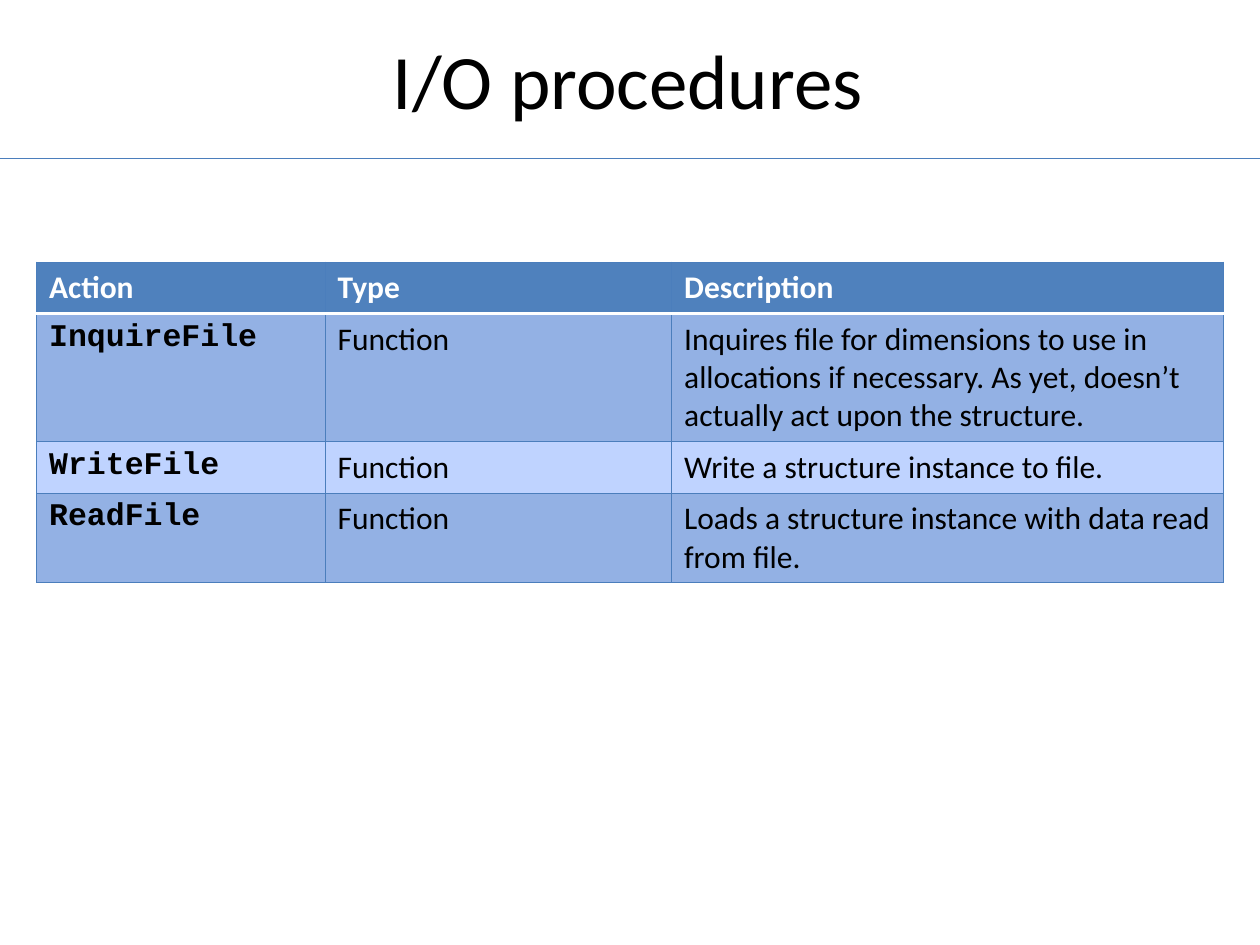
from lxml.etree import SubElement
from pptx import Presentation
from pptx.dml.color import RGBColor
from pptx.enum.shapes import MSO_CONNECTOR
from pptx.enum.text import MSO_ANCHOR, PP_ALIGN
from pptx.oxml.ns import qn
from pptx.util import Inches, Pt

COLORS = {
    "black": "000000",
    "white": "FFFFFF",
    "border": "4B7EBC",
    "header": "4F81BD",
    "dark_band": "93B1E4",
    "light_band": "BFD3FF",
}
COLUMN_WIDTHS = [2.29, 2.75, 4.38]
ROW_HEIGHT = 0.41
ROWS = [
    ("Action", "Type", "Description"),
    ("InquireFile", "Function",
     "Inquires file for dimensions to use in allocations if necessary. "
     "As yet, doesn’t actually act upon the structure."),
    ("WriteFile", "Function", "Write a structure instance to file."),
    ("ReadFile", "Function", "Loads a structure instance with data read from file."),
]


def color(name):
    return RGBColor.from_string(COLORS[name])


def add_run(paragraph, text, size, color_name, font_name="Calibri", bold=False):
    run = paragraph.add_run()
    run.text = text
    run.font.name = font_name
    run.font.size = Pt(size)
    run.font.bold = bold
    run.font.color.rgb = color(color_name)


def set_title(slide, text):
    title = slide.shapes.title
    title.left, title.top = Inches(1.15), Inches(0)
    title.width, title.height = Inches(7.67), Inches(1.25)
    title.text_frame.vertical_anchor = MSO_ANCHOR.MIDDLE
    paragraph = title.text_frame.paragraphs[0]
    paragraph.alignment = PP_ALIGN.CENTER
    add_run(paragraph, text, 44, "black")


def add_rule(slide, top):
    rule = slide.shapes.add_connector(
        MSO_CONNECTOR.STRAIGHT, Inches(0), Inches(top), Inches(10), Inches(top))
    rule.line.color.rgb = color("border")
    rule.line.width = Pt(0.75)
    SubElement(rule._element.spPr, qn("a:effectLst"))


def set_border(cell, side, color_name, width):
    properties = cell._tc.get_or_add_tcPr()
    line = SubElement(properties, qn(f"a:ln{side}"), w=str(Pt(width)))
    fill = SubElement(line, qn("a:solidFill"))
    SubElement(fill, qn("a:srgbClr"), val=COLORS[color_name])


def format_cell(cell, text, row, column):
    separators = {"T": row == 1, "B": row == 0}
    for side in "LRTB":
        if separators.get(side):
            set_border(cell, side, "white", 2)
        else:
            set_border(cell, side, "border", 0.75)
    band = "dark_band" if row % 2 else "light_band"
    cell.fill.solid()
    cell.fill.fore_color.rgb = color("header" if row == 0 else band)
    is_code = row > 0 and column == 0
    add_run(cell.text_frame.paragraphs[0], text, 18,
            "white" if row == 0 else "black",
            "Courier New" if is_code else "Calibri",
            bold=row == 0 or is_code)


def add_procedure_table(slide):
    frame = slide.shapes.add_table(
        len(ROWS), len(COLUMN_WIDTHS), Inches(0.29), Inches(2.08),
        Inches(sum(COLUMN_WIDTHS)), Inches(ROW_HEIGHT * len(ROWS)))
    table = frame.table
    for column, width in zip(table.columns, COLUMN_WIDTHS):
        column.width = Inches(width)
    for row, texts in enumerate(ROWS):
        table.rows[row].height = Inches(ROW_HEIGHT)
        for column, text in enumerate(texts):
            format_cell(table.cell(row, column), text, row, column)


def main():
    presentation = Presentation()
    presentation.slide_width = Inches(10)
    presentation.slide_height = Inches(7.5)
    slide = presentation.slides.add_slide(presentation.slide_layouts[5])
    add_rule(slide, 1.26)
    set_title(slide, "I/O procedures")
    add_procedure_table(slide)
    presentation.save("out.pptx")


if __name__ == "__main__":
    main()
